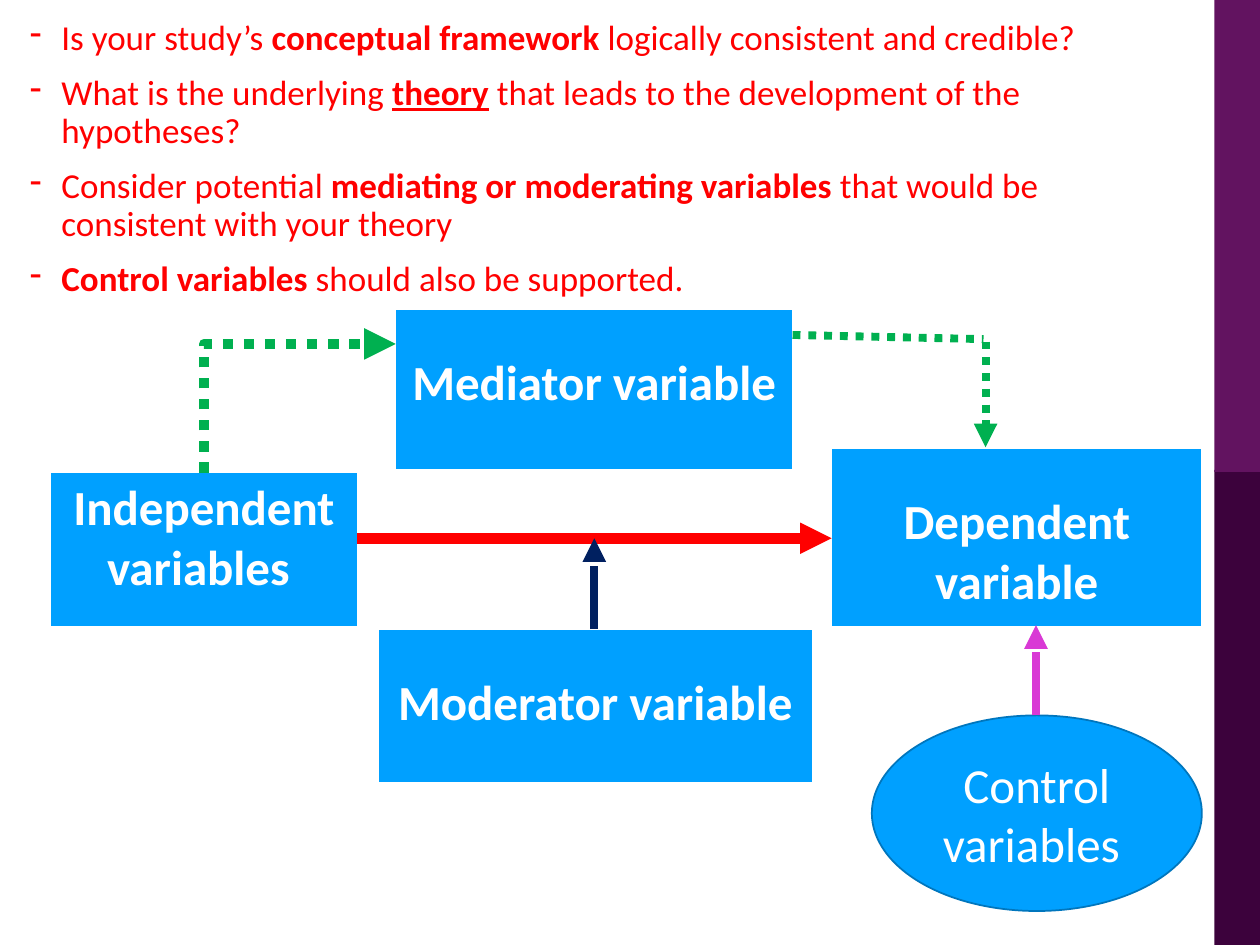
from lxml import etree
from pptx import Presentation
from pptx.dml.color import RGBColor
from pptx.enum.shapes import MSO_CONNECTOR, MSO_SHAPE
from pptx.enum.text import MSO_ANCHOR, PP_ALIGN
from pptx.oxml.ns import qn
from pptx.util import Pt

STRAIGHT, ELBOW = MSO_CONNECTOR.STRAIGHT, MSO_CONNECTOR.ELBOW
RECTANGLE, OVAL = MSO_SHAPE.RECTANGLE, MSO_SHAPE.OVAL
DOTS, LONG_DASHES, SOLID = "sysDot", "lgDashDotDot", "solid"
CENTER, MIDDLE = PP_ALIGN.CENTER, MSO_ANCHOR.MIDDLE
BLUE, GREEN, RED, WHITE = "00A0FF", "00B050", "FF0000", "FFFFFF"


def color(hex_value):
    return RGBColor.from_string(hex_value)


def add_run(paragraph, text, hex_value, **formats):
    run = paragraph.add_run()
    run.text = text
    run.font.name = "Calibri"
    run.font.color.rgb = color(hex_value)
    for name, value in formats.items():
        setattr(run.font, name, value)


presentation = Presentation()
presentation.slide_width, presentation.slide_height = Pt(720), Pt(540)
slide = presentation.slides.add_slide(presentation.slide_layouts[6])
shapes = slide.shapes

for top, height, fill in [(268.5, 271.5, "3C023C"), (0, 269.75, "621360")]:
    band = shapes.add_shape(RECTANGLE, Pt(693.9), Pt(top), Pt(26.1), Pt(height))
    band.shadow.inherit = False
    band.fill.solid()
    band.fill.fore_color.rgb = color(fill)
    band.line.fill.background()

PLAIN, BOLD = {}, {"bold": True}
questions = [
    [("Is your study’s ", PLAIN), ("conceptual framework ", BOLD),
     ("logically consistent and credible?", PLAIN)],
    [("What is the underlying ", PLAIN), ("theory", {"bold": True, "underline": True}),
     (" that leads to the development of the hypotheses?", PLAIN)],
    [("Consider potential ", PLAIN), ("mediating or moderating variables ", BOLD),
     ("that would be consistent with your theory", PLAIN)],
    [("Control variables ", BOLD), ("should also be supported.", PLAIN)],
]
question_box = shapes.add_textbox(Pt(10), Pt(8), Pt(677), Pt(523))
question_frame = question_box.text_frame
question_frame.word_wrap = True
for index, runs in enumerate(questions):
    paragraph = question_frame.add_paragraph() if index else question_frame.paragraphs[0]
    paragraph.line_spacing = 0.9
    paragraph.space_before = Pt(10 if index else 0)
    properties = paragraph._p.get_or_add_pPr()
    properties.set("marL", str(Pt(18)))
    properties.set("indent", str(-Pt(18)))
    etree.SubElement(properties, qn("a:buChar"), char="-")
    for text, formats in runs:
        add_run(paragraph, text, RED, size=Pt(20), **formats)

variables = [
    ("Mediator variable ", 226, 176.6, 227, 92.5, 25.6),
    ("Moderator variable", 216, 359.5, 248.2, 88.5, 25.6),
    ("Independent variables ", 28.8, 270, 175.4, 89, 3.6),
    ("Dependent variable", 475.2, 256, 211.6, 103, 25.6),
]
for text, left, top, width, height, margin_top in variables:
    table = shapes.add_table(1, 1, Pt(left), Pt(top), Pt(width), Pt(height)).table
    table.first_row = table.horz_banding = False
    cell = table.cell(0, 0)
    cell.margin_top = Pt(margin_top)
    paragraph = cell.text_frame.paragraphs[0]
    paragraph.alignment = CENTER
    add_run(paragraph, text, WHITE, size=Pt(28), bold=True)
    properties = cell._tc.get_or_add_tcPr()
    for side, weight in [("L", 1), ("R", 1), ("T", 1), ("B", 3)]:
        border = etree.SubElement(properties, qn("a:ln" + side), w=str(Pt(weight)))
        border_fill = etree.SubElement(border, qn("a:solidFill"))
        etree.SubElement(border_fill, qn("a:srgbClr"), val=WHITE)
    cell.fill.solid()
    cell.fill.fore_color.rgb = color(BLUE)

ellipse = shapes.add_shape(OVAL, Pt(498.2), Pt(408.8), Pt(188.6), Pt(111.8))
ellipse.shadow.inherit = False
ellipse.fill.solid()
ellipse.fill.fore_color.rgb = color(BLUE)
ellipse.line.color.rgb = color("0076BD")
ellipse.line.width = Pt(1)
ellipse.text_frame.word_wrap = True
ellipse.text_frame.vertical_anchor = MIDDLE
paragraph = ellipse.text_frame.paragraphs[0]
paragraph.alignment = CENTER
add_run(paragraph, "Control variables ", WHITE, size=Pt(28))

links = [
    (ELBOW, 208.1, 288, 134.6, 178.6, GREEN, 6, DOTS, True),
    (STRAIGHT, 452.9, 191.4, 562, 193.8, GREEN, 4.5, DOTS, False),
    (STRAIGHT, 563.2, 195.2, 563.2, 255.6, GREEN, 4.5, DOTS, True),
    (STRAIGHT, 204, 307.6, 475.2, 307.6, RED, 6, SOLID, True),
    (STRAIGHT, 339.6, 359.5, 339.6, 307.6, "002060", 4.5, LONG_DASHES, True),
    (STRAIGHT, 592, 408.8, 592, 357.2, "D939D5", 4.5, LONG_DASHES, True),
]
for kind, start_x, start_y, end_x, end_y, stroke, weight, dash, has_arrow in links:
    link = shapes.add_connector(kind, Pt(start_x), Pt(start_y), Pt(end_x), Pt(end_y))
    link.line.color.rgb = color(stroke)
    link.line.width = Pt(weight)
    properties = link._element.spPr
    outline = properties.find(qn("a:ln"))
    etree.SubElement(outline, qn("a:prstDash"), val=dash)
    if has_arrow:
        etree.SubElement(outline, qn("a:tailEnd"), type="triangle")
    etree.SubElement(properties, qn("a:effectLst"))
    if kind == ELBOW:
        properties.find(qn("a:xfrm")).set("rot", "5400000")
        properties.find(qn("a:prstGeom")).set("prst", "bentConnector2")

presentation.save("out.pptx")
